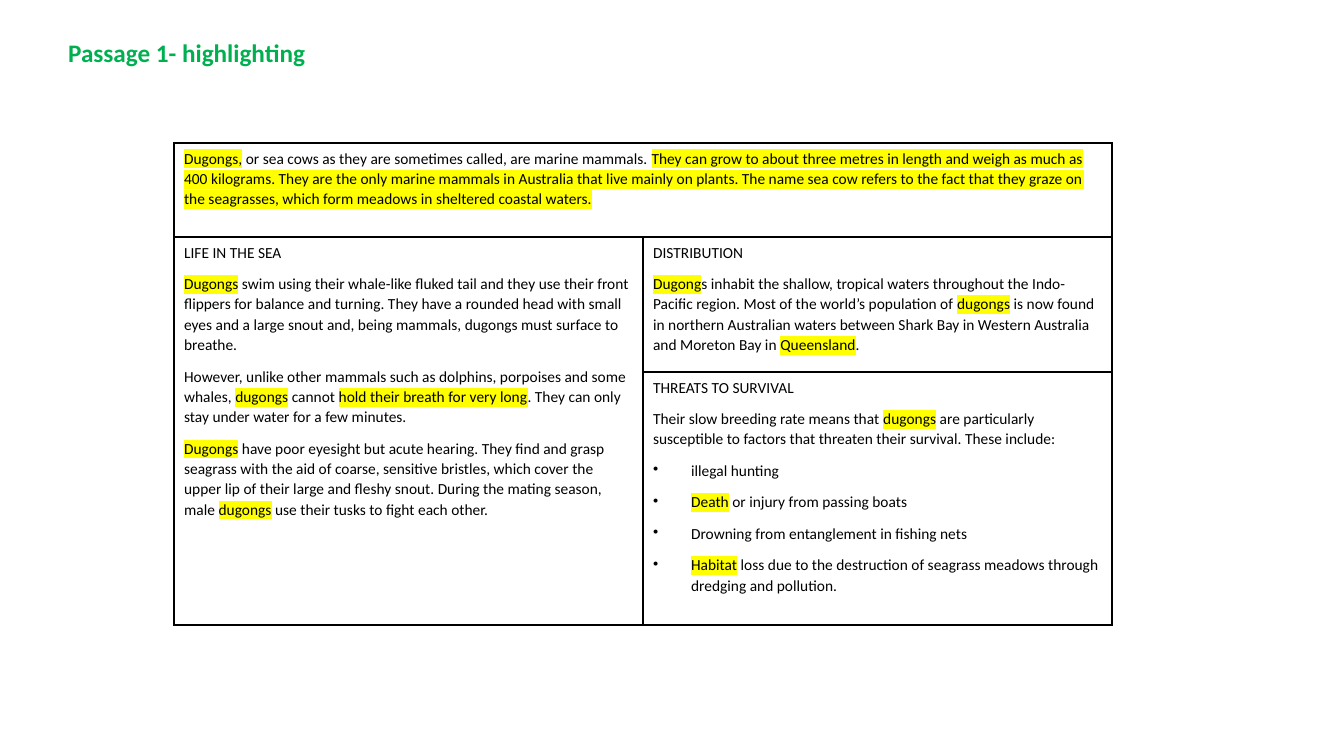
"""Builds a slide with a highlighted reading passage about dugongs."""
from lxml import etree
from pptx import Presentation
from pptx.dml.color import RGBColor
from pptx.enum.text import MSO_ANCHOR, MSO_AUTO_SIZE, PP_ALIGN
from pptx.oxml.ns import qn
from pptx.util import Emu, Pt

LEFT = PP_ALIGN.LEFT
TOP = MSO_ANCHOR.TOP
SHAPE_TO_FIT = MSO_AUTO_SIZE.SHAPE_TO_FIT_TEXT
EMU_PER_PX = 914400 / 100.8
FONT = "Calibri"
COLOURS = {"title": "00B050", "text": "000000", "border": "000000", "highlight": "FFFF00"}
TITLE_LAYOUT = 5
MARK = "|"
BULLET = "• "
BORDER_SIDES = ("lnL", "lnR", "lnT", "lnB")

INTRODUCTION = [
    "|Dugongs,| or sea cows as they are sometimes called, are marine mammals. "
    "|They can grow to about three metres in length and weigh as much as 400 kilograms. "
    "They are the only marine mammals in Australia that live mainly on plants. "
    "The name sea cow refers to the fact that they graze on the seagrasses, "
    "which form meadows in sheltered coastal waters.|",
]
LIFE_IN_THE_SEA = [
    "LIFE IN THE SEA",
    "|Dugongs| swim using their whale-like fluked tail and they use their front flippers "
    "for balance and turning. They have a rounded head with small eyes and a large snout "
    "and, being mammals, dugongs must surface to breathe.",
    "However, unlike other mammals such as dolphins, porpoises and some whales, |dugongs| "
    "cannot |hold their breath for very long|. They can only stay under water for a few "
    "minutes.",
    "|Dugongs| have poor eyesight but acute hearing. They find and grasp seagrass with the "
    "aid of coarse, sensitive bristles, which cover the upper lip of their large and fleshy "
    "snout. During the mating season, male |dugongs| use their tusks to fight each other.",
]
DISTRIBUTION = [
    "DISTRIBUTION",
    "|Dugong|s inhabit the shallow, tropical waters throughout the Indo-Pacific region. "
    "Most of the world’s population of |dugongs| is now found in northern Australian waters "
    "between Shark Bay in Western Australia and Moreton Bay in |Queensland|.",
]
THREATS = [
    "THREATS TO SURVIVAL",
    "Their slow breeding rate means that |dugongs| are particularly susceptible to factors "
    "that threaten their survival. These include:",
    "• illegal hunting",
    "• |Death| or injury from passing boats",
    "• Drowning from entanglement in fishing nets",
    "• |Habitat| loss due to the destruction of seagrass meadows through dredging and pollution.",
]


def px(length):
    """Turn pixels into EMU."""
    return Emu(round(length * EMU_PER_PX))


def set_font(para, size, colour, bold=False):
    """Set the font of a whole paragraph."""
    para.font.name = FONT
    para.font.size = Pt(size)
    para.font.bold = bold
    para.font.color.rgb = RGBColor.from_string(COLOURS[colour])


def add_colour(parent, colour):
    """Add a colour element under a fill or highlight."""
    etree.SubElement(parent, qn("a:srgbClr"), val=COLOURS[colour])


def add_bullet(para):
    """Give a paragraph a hanging bullet."""
    properties = para._p.get_or_add_pPr()
    properties.set("marL", str(px(38)))
    properties.set("indent", str(px(-38)))
    etree.SubElement(properties, qn("a:buChar"), char=BULLET.strip())


def write_paragraph(para, text):
    """Write text whose marked parts are highlighted."""
    if text.startswith(BULLET):
        add_bullet(para)
    para.line_spacing = 1.07
    para.space_after = Pt(8)
    set_font(para, 11, "text")
    for index, part in enumerate(text.removeprefix(BULLET).split(MARK)):
        if not part:
            continue
        span = para.add_run()
        span.text = part
        if index % 2:
            properties = span._r.get_or_add_rPr()
            add_colour(etree.SubElement(properties, qn("a:highlight")), "highlight")


def write_cell(cell, texts):
    """Fill a table cell with paragraphs."""
    frame = cell.text_frame
    for index, text in enumerate(texts):
        para = frame.add_paragraph() if index else frame.paragraphs[0]
        write_paragraph(para, text)


def draw_borders(cell):
    """Draw thin lines round a cell and clear its fill."""
    properties = cell._tc.get_or_add_tcPr()
    for side in BORDER_SIDES:
        line = etree.SubElement(properties, qn(f"a:{side}"), w=str(Pt(1)))
        add_colour(etree.SubElement(line, qn("a:solidFill")), "border")
    cell.fill.background()


def add_title(page, text):
    """Place and format the slide title."""
    title = page.shapes.title
    title.left, title.top, title.width, title.height = map(px, (58, 32, 368, 41))
    frame = title.text_frame
    frame.text = text
    frame.vertical_anchor = TOP
    frame.auto_size = SHAPE_TO_FIT
    para = frame.paragraphs[0]
    para.alignment = LEFT
    para.line_spacing = 1.0
    para.space_before = Pt(0)
    set_font(para, 18, "title", bold=True)


def add_passage(page):
    """Add the passage table with its merged cells."""
    row_heights = (94, 135, 253)
    frame = page.shapes.add_table(3, 2, px(174), px(143), px(938), px(sum(row_heights)))
    table = frame.table
    table.first_row = False
    table.horz_banding = False
    for row, height in zip(table.rows, row_heights):
        row.height = px(height)
    for cell in table.iter_cells():
        draw_borders(cell)
    table.cell(0, 0).merge(table.cell(0, 1))
    table.cell(1, 0).merge(table.cell(2, 0))
    write_cell(table.cell(0, 0), INTRODUCTION)
    write_cell(table.cell(1, 0), LIFE_IN_THE_SEA)
    write_cell(table.cell(1, 1), DISTRIBUTION)
    write_cell(table.cell(2, 1), THREATS)


def main():
    """Build and save the deck."""
    deck = Presentation()
    deck.slide_width, deck.slide_height = px(1344), px(756)
    page = deck.slides.add_slide(deck.slide_layouts[TITLE_LAYOUT])
    add_title(page, "Passage 1- highlighting")
    add_passage(page)
    deck.save("out.pptx")


if __name__ == "__main__":
    main()
